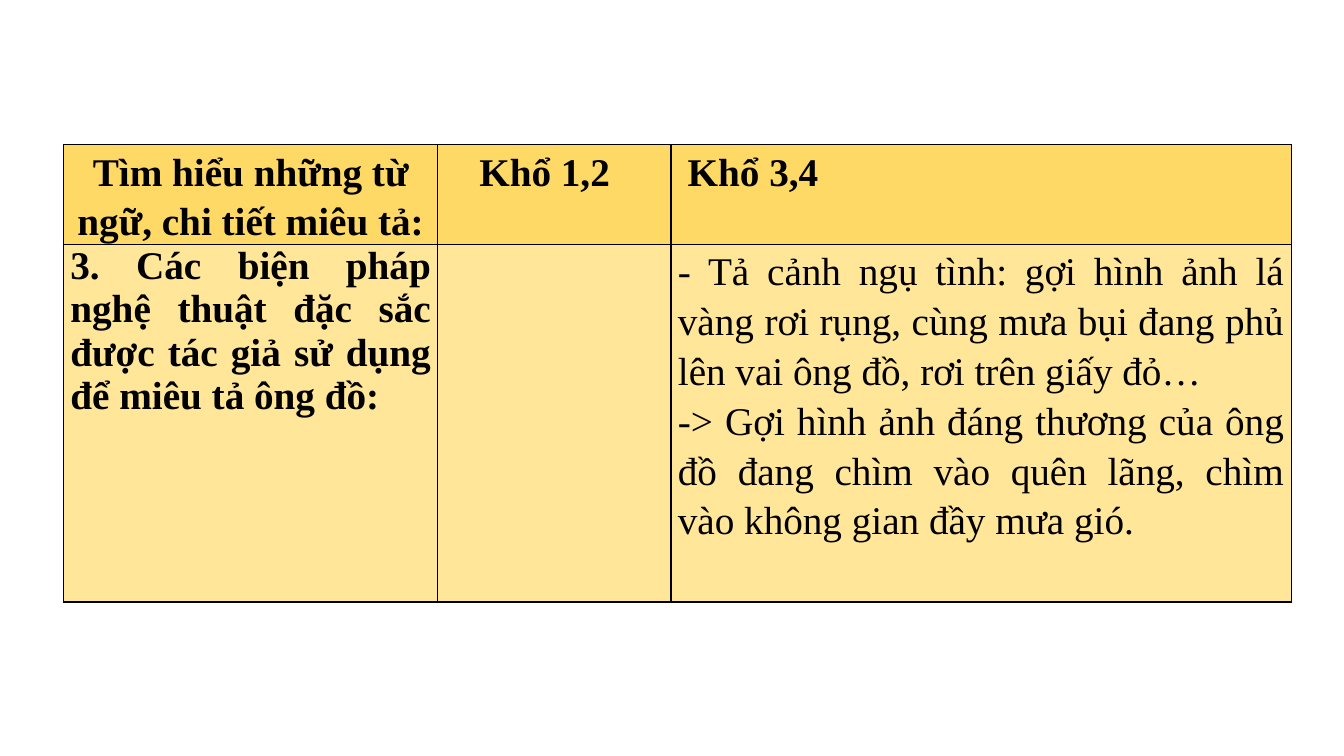
from dataclasses import dataclass

import pptx
import pptx.dml.color
import pptx.enum.text
import pptx.oxml
import pptx.oxml.ns
import pptx.util

Pt = pptx.util.Pt
Align = pptx.enum.text.PP_ALIGN


@dataclass(frozen=True)
class Theme:
    font: str = "Times New Roman"
    size: int = 28
    text: str = "000000"
    border: str = "000000"
    border_width: int = 1
    header_fill: str = "FFD966"
    body_fill: str = "FFE699"
    inset: int = 5
    loose_spacing: float = 1.15


THEME = Theme()


def rgb(value):
    return pptx.dml.color.RGBColor.from_string(value)


def add_borders(cell):
    """Outline the cell; call before the fill, which must follow the lines."""
    properties = cell._tc.get_or_add_tcPr()
    for side in ("lnL", "lnR", "lnT", "lnB"):
        properties.append(pptx.oxml.parse_xml(
            f'<a:{side} {pptx.oxml.ns.nsdecls("a")} w="{Pt(THEME.border_width)}">'
            f'<a:solidFill><a:srgbClr val="{THEME.border}"/></a:solidFill></a:{side}>'
        ))


def style_cell(cell, fill, extra_left=0, extra_right=0):
    add_borders(cell)
    cell.fill.solid()
    cell.fill.fore_color.rgb = rgb(fill)
    cell.margin_left = Pt(THEME.inset + extra_left)
    cell.margin_right = Pt(THEME.inset + extra_right)
    cell.margin_top = cell.margin_bottom = Pt(0)


def write_cell(cell, texts, alignment, bold=True, spacing=THEME.loose_spacing):
    frame = cell.text_frame
    for index, text in enumerate(texts):
        paragraph = frame.add_paragraph() if index else frame.paragraphs[0]
        paragraph.alignment = alignment
        paragraph.line_spacing = spacing
        run = paragraph.add_run()
        run.text = text
        run.font.name = THEME.font
        run.font.size = Pt(THEME.size)
        run.font.bold = bold
        run.font.color.rgb = rgb(THEME.text)


def add_grid(slide, left, top, widths, heights):
    frame = slide.shapes.add_table(
        len(heights), len(widths), Pt(left), Pt(top), Pt(sum(widths)), Pt(sum(heights))
    )
    table = frame.table
    for column, width in zip(table.columns, widths):
        column.width = Pt(width)
    for row, height in zip(table.rows, heights):
        row.height = Pt(height)
    return table


def main():
    presentation = pptx.Presentation()
    presentation.slide_width = Pt(960)
    presentation.slide_height = Pt(540)
    slide = presentation.slides.add_slide(presentation.slide_layouts[6])

    table = add_grid(slide, 45.3, 103.3, (267.5, 166.5, 443), (71, 255.5))
    topic_head, early_head, late_head = table.rows[0].cells
    topic, early, late = table.rows[1].cells

    style_cell(topic_head, THEME.header_fill)
    style_cell(early_head, THEME.header_fill, extra_right=14)
    style_cell(late_head, THEME.header_fill, extra_left=7)
    for cell in (topic, early, late):
        style_cell(cell, THEME.body_fill)

    write_cell(topic_head, ["Tìm hiểu những từ ngữ, chi tiết miêu tả:"], Align.CENTER)
    write_cell(early_head, ["Khổ 1,2"], Align.CENTER)
    write_cell(late_head, ["Khổ 3,4"], Align.LEFT)
    write_cell(
        topic,
        ["3. Các biện pháp nghệ thuật đặc sắc được tác giả sử dụng để miêu tả ông đồ:"],
        Align.JUSTIFY,
        spacing=1.0,
    )
    write_cell(
        late,
        [
            "- Tả cảnh ngụ tình: gợi hình ảnh lá vàng rơi rụng, cùng mưa bụi đang phủ "
            "lên vai ông đồ, rơi trên giấy đỏ…",
            "-> Gợi hình ảnh đáng thương của ông đồ đang chìm vào quên lãng, chìm vào "
            "không gian đầy mưa gió.",
        ],
        Align.JUSTIFY,
        bold=False,
    )
    presentation.save("out.pptx")


if __name__ == "__main__":
    main()
